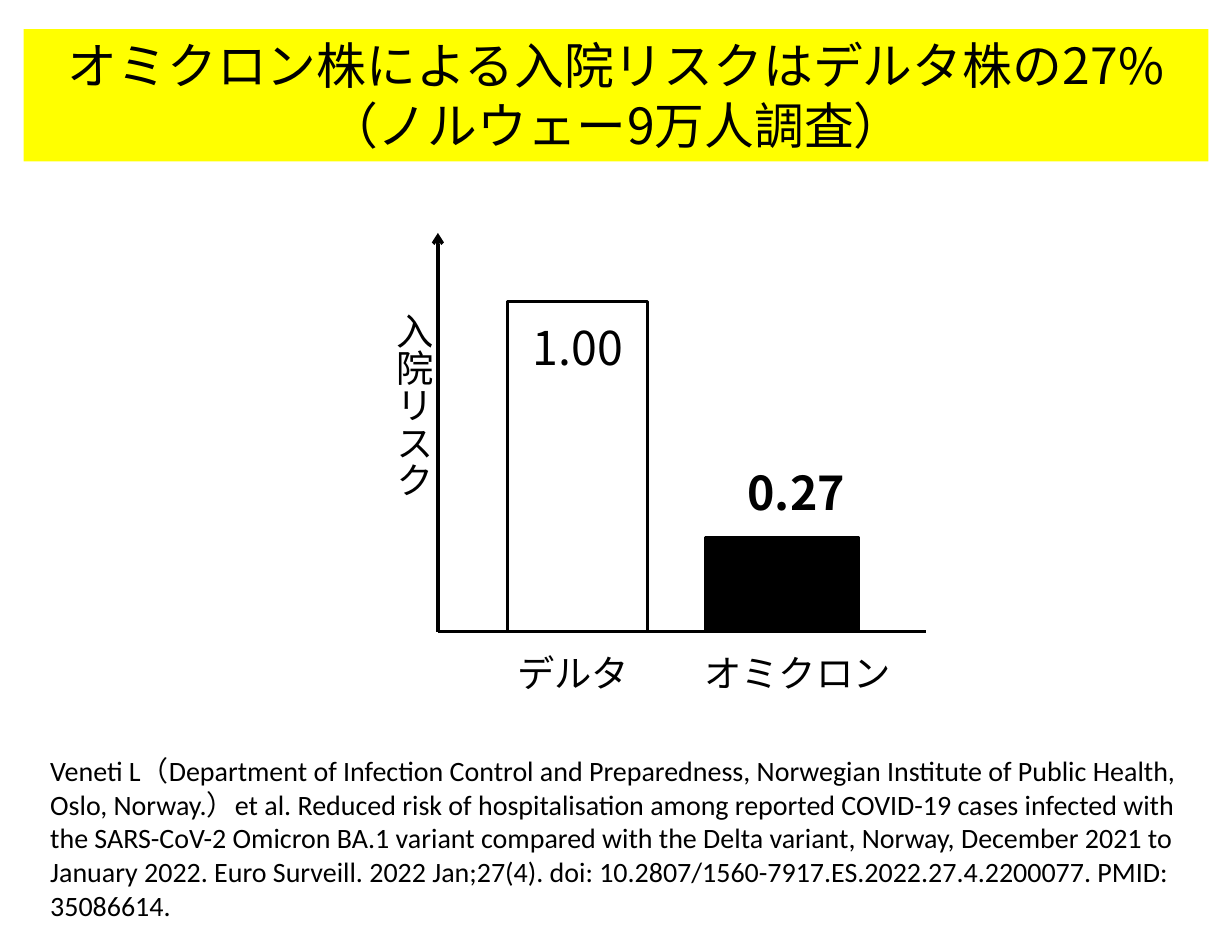
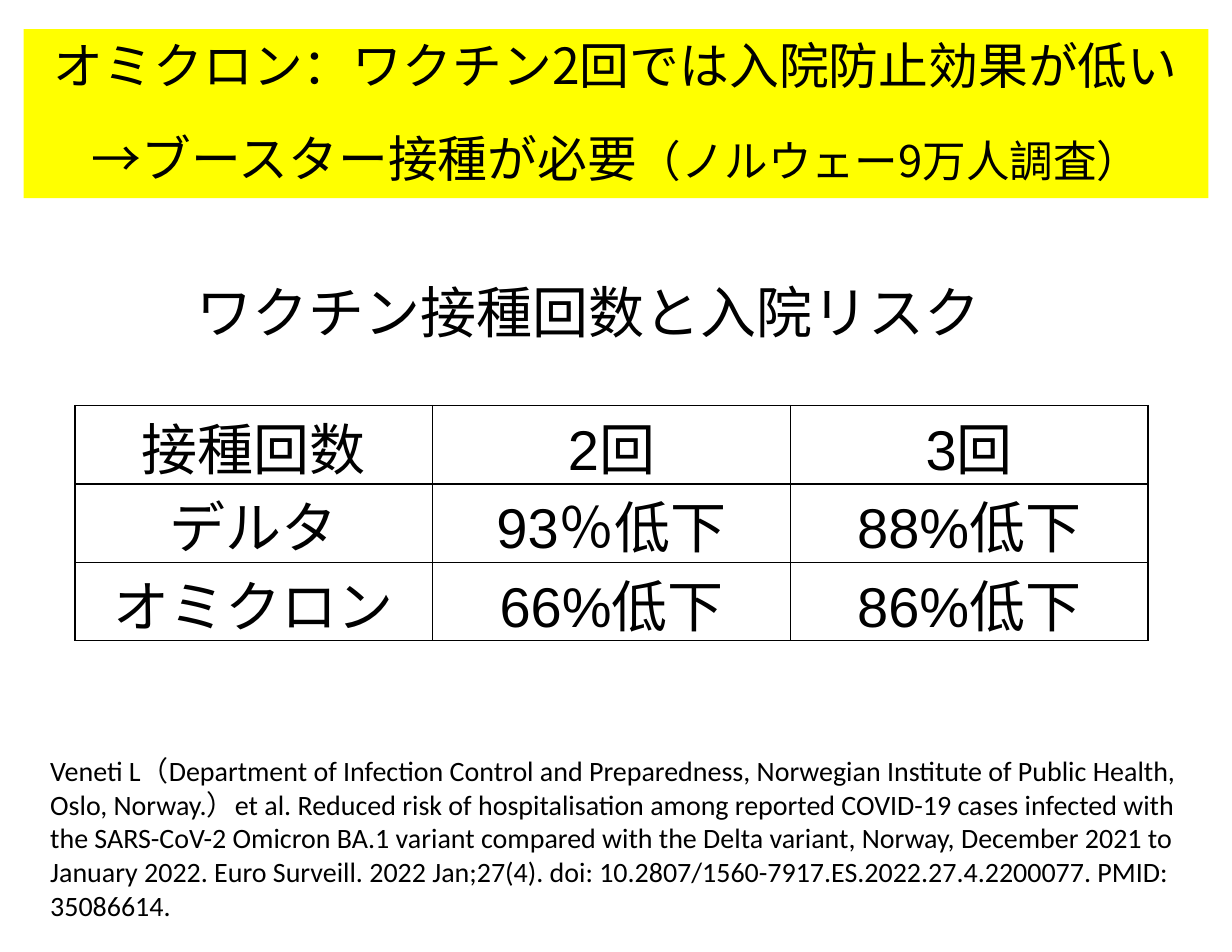
"""Build two slides on hospitalisation risk with the Omicron variant."""
from lxml.etree import SubElement
from pptx import Presentation
from pptx.dml.color import RGBColor
from pptx.enum.shapes import MSO_CONNECTOR as Connector, MSO_SHAPE as Preset
from pptx.enum.text import MSO_ANCHOR as Anchor, MSO_AUTO_SIZE as AutoSize, PP_ALIGN as Align
from pptx.oxml.ns import qn
from pptx.util import Pt

SCALE = 9144
BLACK, WHITE, YELLOW = "000000", "FFFFFF", "FFFF00"
CJK, SANS, CITED = "Noto Sans CJK JP", "Arial", "Calibri"
SURVEY = "（ノルウェー9万人調査）"
CITATION = (
    "Veneti L（Department of Infection Control and Preparedness, Norwegian Institute "
    "of Public Health, Oslo, Norway.）et al. Reduced risk of hospitalisation among "
    "reported COVID-19 cases infected with the SARS-CoV-2 Omicron BA.1 variant compared "
    "with the Delta variant, Norway, December 2021 to January 2022. Euro Surveill. 2022 "
    "Jan;27(4). doi: 10.2807/1560-7917.ES.2022.27.4.2200077. PMID: 35086614."
)


def px(*lengths):
    return [length * SCALE for length in lengths]


def color(value):
    return RGBColor.from_string(value)


def assign(target, values):
    for key, value in values.items():
        setattr(target, key, value)


class Deck:
    """Hold the shared style and the slide being drawn."""

    def __init__(self, width, height):
        self.show = Presentation()
        self.show.slide_width, self.show.slide_height = px(width, height)
        self.slide = None

    def fill_in(self, paragraph, runs, size, font=CJK, bold=False, align=Align.LEFT, **spacing):
        assign(paragraph, {"alignment": align, **spacing})
        for words, run_size in runs if isinstance(runs, list) else [(runs, size)]:
            run = paragraph.add_run()
            run.text = words
            assign(run.font, {"size": Pt(run_size), "name": font, "bold": bold})
            run.font.color.rgb = color(BLACK)
            SubElement(run.font._element, qn("a:ea"), typeface=CJK)

    def page(self, title_height, *lines):
        self.slide = self.show.slides.add_slide(self.show.slide_layouts[5])
        title = self.slide.shapes.title
        title.left, title.top, title.width, title.height = px(21, 26, 1058, title_height)
        title.fill.solid()
        title.fill.fore_color.rgb = color(YELLOW)
        frame = title.text_frame
        assign(frame, {"auto_size": AutoSize.SHAPE_TO_FIT_TEXT, "word_wrap": True,
                       "vertical_anchor": Anchor.TOP})
        for index, (runs, gap) in enumerate(lines):
            paragraph = frame.add_paragraph() if index else frame.paragraphs[0]
            self.fill_in(paragraph, runs, 32, align=Align.CENTER, space_before=Pt(gap))
        self.text(35, 668, 1029, 162, CITATION, 18, font=CITED, space_after=Pt(21))

    def text(self, left, top, width, height, words, size, vertical=False, **style):
        frame = self.slide.shapes.add_textbox(*px(left, top, width, height)).text_frame
        assign(frame, {"word_wrap": True, "auto_size": AutoSize.SHAPE_TO_FIT_TEXT})
        if vertical:
            frame._txBody.bodyPr.set("vert", "eaVert")
        self.fill_in(frame.paragraphs[0], words, size, **style)

    def bar(self, left, top, width, height, fill):
        bar = self.slide.shapes.add_shape(Preset.RECTANGLE, *px(left, top, width, height))
        bar.shadow.inherit = False
        bar.fill.solid()
        bar.fill.fore_color.rgb = color(fill)
        bar.line.color.rgb = color(BLACK)
        bar.line.width = Pt(2.25)

    def axis(self, start, end, arrow=False):
        axis = self.slide.shapes.add_connector(Connector.STRAIGHT, *px(*start, *end))
        axis.line.color.rgb = color(BLACK)
        axis.line.width = Pt(2.25)
        if arrow:
            SubElement(axis.line._get_or_add_ln(), qn("a:tailEnd"), type="arrow")
        SubElement(axis._element.spPr, qn("a:effectLst"))

    def table(self, left, top, width, height, rows):
        grid = self.slide.shapes.add_table(
            len(rows), len(rows[0]), *px(left, top, width, height)).table
        assign(grid, {"first_row": False, "horz_banding": False})
        for row, entries in enumerate(rows):
            for column, entry in enumerate(entries):
                cell = grid.cell(row, column)
                assign(cell, {"margin_top": 0, "margin_bottom": 0,
                              "vertical_anchor": Anchor.BOTTOM})
                self.border(cell._tc.get_or_add_tcPr())
                cell.fill.background()
                self.fill_in(cell.text_frame.paragraphs[0], entry, 36, SANS, align=Align.CENTER)

    def border(self, properties):
        for side in ("lnL", "lnR", "lnT", "lnB"):
            edge = SubElement(properties, qn(f"a:{side}"), w=str(Pt(1)))
            fill = SubElement(edge, qn("a:solidFill"))
            SubElement(fill, qn("a:srgbClr"), val=BLACK)


def main():
    deck = Deck(1100, 850)

    deck.page(118, ("オミクロン株による入院リスクはデルタ株の27%", 0), (SURVEY, 0))
    origin = (391, 564)
    deck.bar(453, 269, 125, 295, WHITE)
    deck.bar(630, 480, 136, 83, BLACK)
    deck.axis(origin, (827, 564))
    deck.axis(origin, (391, 208), arrow=True)
    deck.text(464, 280, 104, 60, "1.00", 29.9, align=Align.CENTER)
    deck.text(643, 409, 136, 60, "0.27", 29.9, bold=True, align=Align.CENTER)
    deck.text(333, 269, 61, 248, "入院リスク", 24, vertical=True, font=SANS)
    for left, variant in ((452, "デルタ"), (619, "オミクロン")):
        deck.text(left, 576, 192, 50, variant, 24, font=SANS)

    deck.page(151, ("オミクロン：ワクチン2回では入院防止効果が低い", 0),
              ([("→ブースター接種が必要", 32), (SURVEY, 28)], 21.6))
    deck.text(142, 243, 767, 71, "ワクチン接種回数と入院リスク", 36, align=Align.CENTER)
    deck.table(67, 362, 958, 210, [
        ("接種回数", "2回", "3回"),
        ("デルタ", "93％低下", "88%低下"),
        ("オミクロン", "66%低下", "86%低下"),
    ])

    deck.show.save("out.pptx")


if __name__ == "__main__":
    main()
